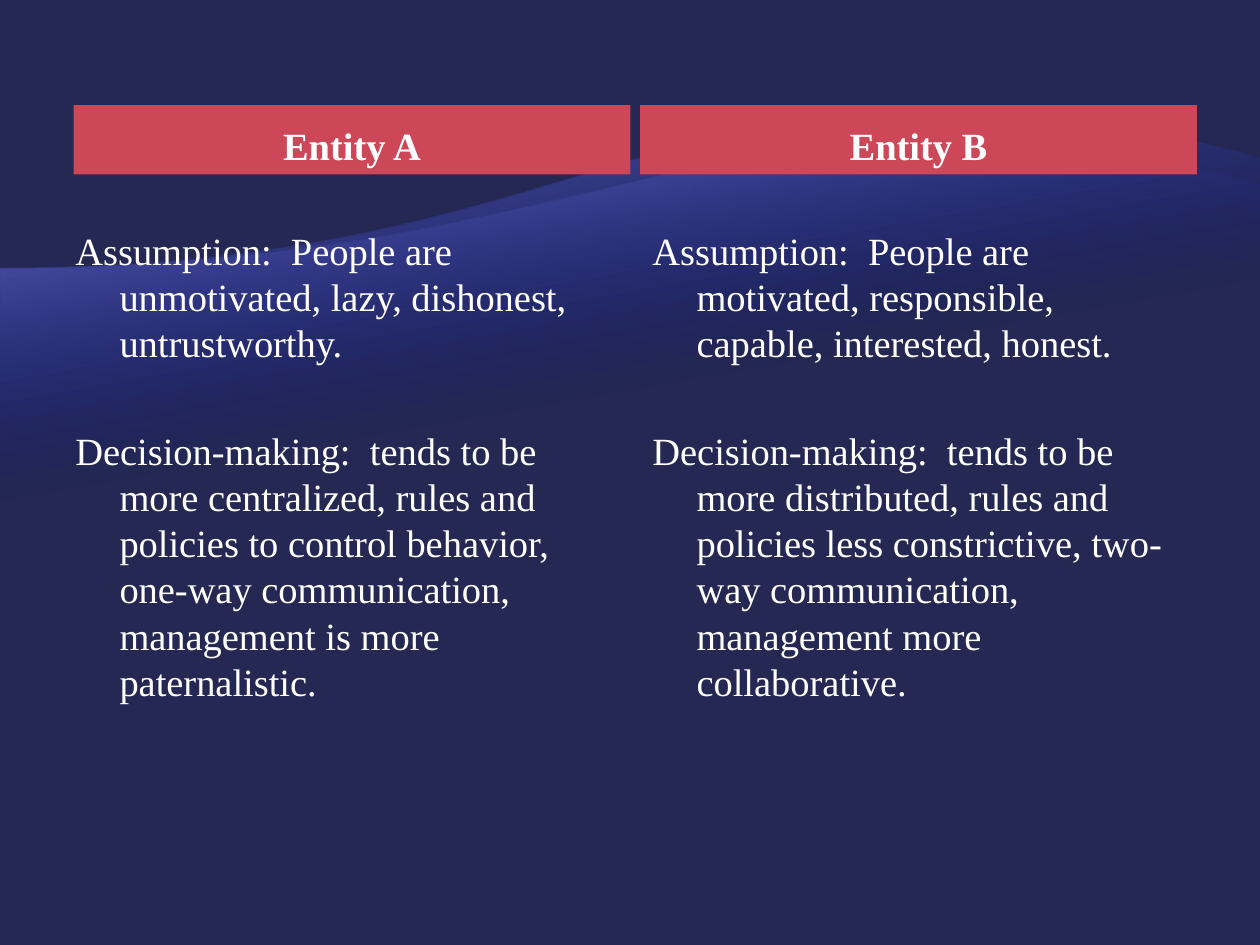
from lxml import etree
from pptx import Presentation
from pptx.dml.color import RGBColor
from pptx.enum.shapes import MSO_SHAPE
from pptx.enum.text import MSO_ANCHOR, PP_ALIGN
from pptx.oxml import parse_xml
from pptx.oxml.ns import nsdecls, qn
from pptx.util import Inches, Pt

RECTANGLE = MSO_SHAPE.RECTANGLE
BOTTOM, TOP = MSO_ANCHOR.BOTTOM, MSO_ANCHOR.TOP
CENTER, LEFT = PP_ALIGN.CENTER, PP_ALIGN.LEFT

WIDTH, HEIGHT = 10, 7.5
NAVY, RED, WHITE = "242852", "CC4757", "FFFFFF"
FONT, SIZE = "Times New Roman", 22
COLUMN_WIDTH = 4.42
HEADER_TOP, HEADER_HEIGHT = HEIGHT / 9, 0.55
BODY_TOP, BODY_HEIGHT = 1.75, 4
HANGING = 0.35

# bottom edge, Bezier points of the upper edge, light colour, its opacity in %
WAVES = [
    (7.33, [(0, 2.13), (5, 2.13), (5.34, 0.05), (10, 1.25)], "797FFF", 55),
    (6.37, [(0, 2.13), (5, 2.13), (5.98, 0.31), (10, 1.47)], "A3A7FF", 30),
]
# header left, body left, heading, paragraphs
COLUMNS = [
    (7 / 12, 0.5, "Entity A", [
        "Assumption:  People are unmotivated, lazy, dishonest, untrustworthy.",
        "Decision-making:  tends to be more centralized, rules and policies to "
        "control behavior, one-way communication, management is more paternalistic.",
    ]),
    (5.08, 5.08, "Entity B", [
        "Assumption:  People are motivated, responsible, capable, interested, honest.",
        "Decision-making:  tends to be more distributed, rules and policies less "
        "constrictive, two-way communication, management more collaborative.",
    ]),
]


def color(value):
    return RGBColor.from_string(value)


def fade_upward(shape, light, opacity):
    """Fill with a gradient that runs from clear at the bottom to light at the top."""
    gradient = parse_xml(f'<a:gradFill {nsdecls("a")} rotWithShape="1"><a:gsLst/></a:gradFill>')
    for position, value, alpha in ((65, "000D9E", 0), (100, light, opacity)):
        stop = etree.SubElement(gradient[0], qn("a:gs"), pos=str(position * 1000))
        tint = etree.SubElement(stop, qn("a:srgbClr"), val=value)
        etree.SubElement(tint, qn("a:alpha"), val=str(alpha * 1000))
    etree.SubElement(gradient, qn("a:lin"), ang=str(260 * 60000), scaled="0")
    shape._element.spPr.find(qn("a:custGeom")).addnext(gradient)


def bend_first_side(shape, points):
    """Turn the first straight side into a Bezier curve through the given points."""
    line = next(shape._element.iter(qn("a:lnTo")))
    curve = etree.Element(qn("a:cubicBezTo"))
    for x, y in points:
        etree.SubElement(curve, qn("a:pt"), x=str(Inches(x) - shape.left),
                         y=str(Inches(y) - shape.top))
    line.getparent().replace(line, curve)


def add_wave(slide, bottom, edge, light, opacity):
    corners = [(Inches(x), Inches(y))
               for x, y in (edge[0], edge[-1], (WIDTH, bottom), (0, bottom))]
    builder = slide.shapes.build_freeform(*corners[0])
    builder.add_line_segments(corners[1:], close=True)
    wave = builder.convert_to_shape()
    bend_first_side(wave, edge[1:])
    wave.shadow.inherit = False
    wave.line.fill.background()
    fade_upward(wave, light, opacity)


def write(frame, texts, anchor, alignment, bold=False, gap=0):
    frame.word_wrap = True
    frame.vertical_anchor = anchor
    for index, text in enumerate(texts):
        paragraph = frame.paragraphs[0] if index == 0 else frame.add_paragraph()
        paragraph.text = text
        paragraph.alignment = alignment
        paragraph.space_before = Pt(gap if index else 0.2 * SIZE)
        properties = paragraph._p.get_or_add_pPr()
        properties.set("marL", str(Inches(HANGING)))
        properties.set("indent", str(-Inches(HANGING)))
        font = paragraph.font
        font.name, font.size, font.bold = FONT, Pt(SIZE), bold
        font.color.rgb = color(WHITE)


def add_header(slide, box, text):
    header = slide.shapes.add_shape(RECTANGLE, *map(Inches, box))
    header.shadow.inherit = False
    header.fill.solid()
    header.fill.fore_color.rgb = color(RED)
    header.line.fill.background()
    write(header.text_frame, [text], BOTTOM, CENTER, bold=True)


def add_body(slide, box, texts):
    body = slide.shapes.add_textbox(*map(Inches, box))
    write(body.text_frame, texts, TOP, LEFT, gap=1.6 * SIZE)


def main():
    presentation = Presentation()
    presentation.slide_width, presentation.slide_height = Inches(WIDTH), Inches(HEIGHT)
    slide = presentation.slides.add_slide(presentation.slide_layouts[6])
    slide.background.fill.solid()
    slide.background.fill.fore_color.rgb = color(NAVY)
    for wave in WAVES:
        add_wave(slide, *wave)
    for header_left, body_left, heading, texts in COLUMNS:
        add_header(slide, (header_left, HEADER_TOP, COLUMN_WIDTH, HEADER_HEIGHT), heading)
        add_body(slide, (body_left, BODY_TOP, COLUMN_WIDTH, BODY_HEIGHT), texts)
    presentation.save("out.pptx")


if __name__ == "__main__":
    main()
